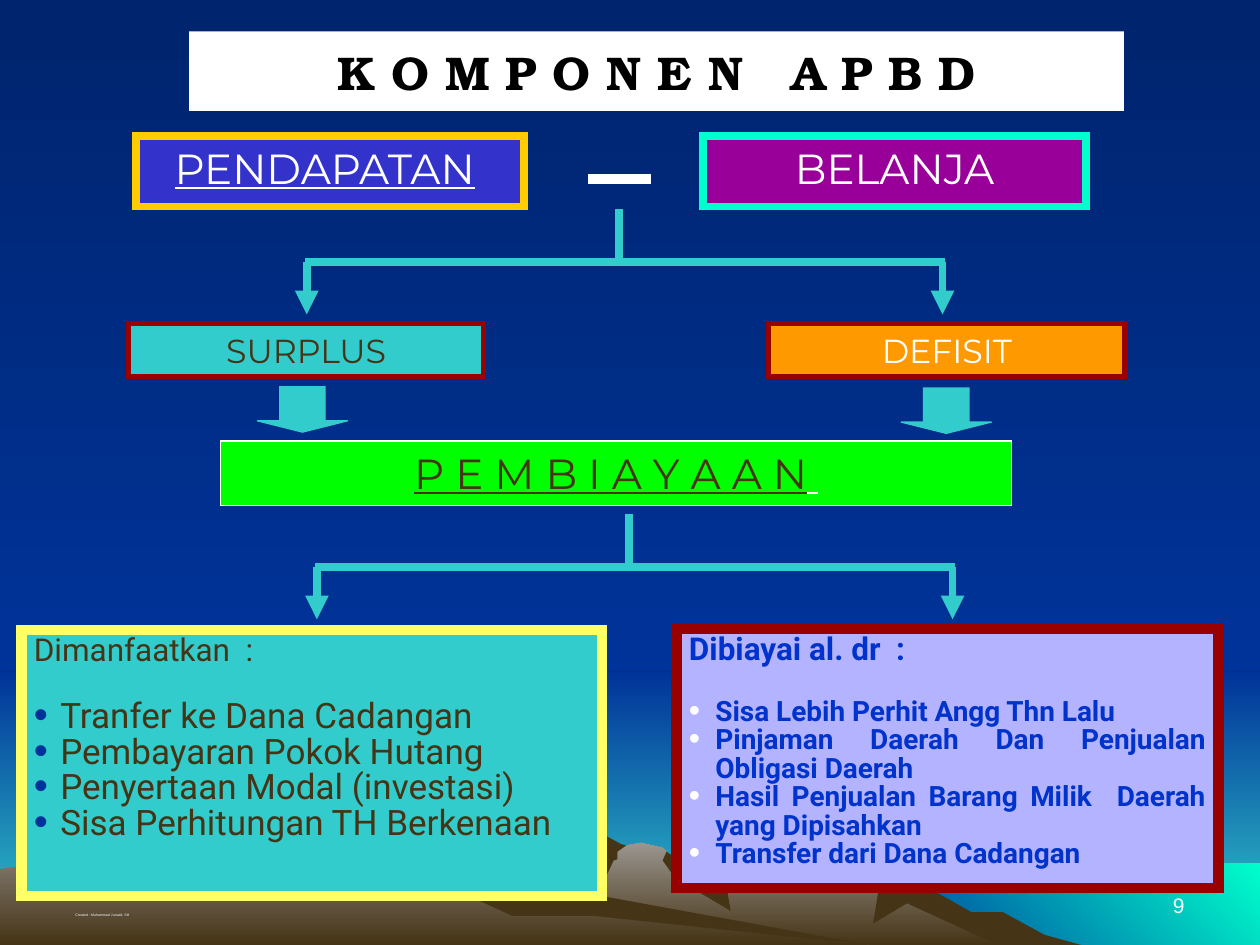
import pptx
import pptx.dml.color
import pptx.enum.shapes
import pptx.enum.text
import pptx.oxml
import pptx.oxml.ns
import pptx.util

RGB = pptx.dml.color.RGBColor
SHAPE = pptx.enum.shapes.MSO_SHAPE
ALIGN = pptx.enum.text.PP_ALIGN
ANCHOR = pptx.enum.text.MSO_ANCHOR

WHITE = RGB(0xFF, 0xFF, 0xFF)
INK = RGB(0x01, 0x00, 0x00)
NIGHT = RGB(0x00, 0x24, 0x6D)
NAVY = RGB(0x00, 0x33, 0x99)
TEAL = RGB(0x33, 0xCC, 0xCC)
AQUA = RGB(0x00, 0xFF, 0xCC)
BROWN = RGB(0x46, 0x34, 0x16)
STONE = RGB(0xA5, 0xA2, 0x9F)
SLATE = RGB(0x93, 0x8F, 0x8B)
ORANGE = RGB(0xFF, 0x99, 0x00)
GOLD = RGB(0xFF, 0xCC, 0x00)
YELLOW = RGB(0xFF, 0xFF, 0x66)
GREEN = RGB(0x00, 0xFF, 0x00)
RED = RGB(0x99, 0x00, 0x00)
PURPLE = RGB(0x99, 0x00, 0x99)
INDIGO = RGB(0x33, 0x33, 0xCC)
LILAC = RGB(0xB3, 0xB3, 0xFF)
BLUE = RGB(0x00, 0x33, 0xCC)

COLUMNS, ROWS = 100, 75
DOWN, UP_RIGHT = 270, 45

PEAK = [
    (80.2, 74), (77.8, 72.7), (76.4, 72.3), (72.3, 69.8), (70.2, 67.1), (68.5, 66),
    (67.6, 66.6), (65.6, 67.1), (62.9, 67.1), (61.3, 68.1), (56.6, 69.7), (53.6, 69),
    (52.9, 67.6), (52.6, 67.3), (50.9, 66.9), (48.6, 67.3), (47.1, 65.8), (46.5, 65.8),
    (45, 66.4), (43.8, 67.1), (42.4, 67.2), (39.5, 68.4), (35.5, 69.8), (32.7, 70.9),
    (27.7, 73.9), (25.8, 75), (82.1, 75)]
PEAK_SHADES = [
    [(79.6, 72.4), (77.1, 72.4), (73.4, 70.3), (70.7, 67.1), (68.5, 66), (68.9, 66.4),
     (68.5, 67.1), (69.1, 68), (69.8, 70.2), (69.3, 73.3), (72, 71.7), (79.2, 75),
     (85.8, 75), (82.9, 74.2)],
    [(47.1, 65.8), (47.4, 66.2), (46.9, 66.4), (46.8, 67.1), (47.2, 68), (47.3, 69),
     (46.5, 72.7), (47.4, 70.4), (47.9, 70), (48.7, 68.3), (49, 68.2), (49, 67.6),
     (49.7, 67.1), (49.3, 67)],
    [(52.9, 67.6), (52.6, 68.3), (53.6, 69.7), (58, 72.3), (57.6, 70), (59.2, 68.9),
     (57, 69.2), (54.2, 68.5)]]
RIDGE = [
    (69, 75), (66.7, 74.8), (43.2, 71.2), (35.4, 66.5), (33.1, 66.3), (32.7, 66.8),
    (32.3, 66.8), (31.8, 66.4), (29.6, 67.6), (27.9, 68.1), (27.1, 68.2), (26, 67.6),
    (23.6, 68.1), (22.3, 66.3), (21.2, 65.8), (19.6, 65.8), (18.9, 66.2), (16, 67.1),
    (14.8, 66.7), (14.3, 66.7), (13.2, 67.1), (12.3, 66.9), (11.1, 66.9), (9.4, 67.1),
    (6.8, 66.2), (5.6, 66.9), (3.5, 67.9), (2.6, 68.5), (1.4, 68.8), (0, 69), (0, 75)]
RIDGE_SHADES = [
    [(21.2, 66.3), (20.8, 66.9), (21.9, 67.8), (23.2, 69), (24.1, 68.8), (26.7, 70.9),
     (26.1, 68.9), (27.1, 68.2), (26, 67.4), (24.5, 66.8), (23, 66.2), (21.3, 65.9)],
    [(37, 66.8), (35.4, 66.5), (34.4, 66.5), (33.9, 66.9), (33.7, 68.7), (34.8, 68.3),
     (35.3, 68.8), (36.3, 69.1), (37.4, 71.2), (40.7, 72.7), (47.2, 72.7), (69, 75),
     (45.5, 70.7), (42.7, 69.2), (40.1, 68.1)]]


class Board:
    """Holds the grid, the colours' application and the page being drawn."""

    def __init__(self, deck):
        self.column = deck.slide_width / COLUMNS
        self.row = deck.slide_height / ROWS
        self.page = deck.slides.add_slide(deck.slide_layouts[6])

    def cells(self, x, y):
        return round(x * self.column), round(y * self.row)

    def paint(self, fill, colours, angle=DOWN):
        if isinstance(colours, RGB):
            fill.solid()
            fill.fore_color.rgb = colours
            return
        fill.gradient()
        fill.gradient_angle = angle
        for stop, colour in zip(fill.gradient_stops, colours):
            stop.color.rgb = colour

    def finish(self, shape, colours, edge=None, width=0, angle=DOWN):
        shape.shadow.inherit = False
        self.paint(shape.fill, colours, angle)
        if edge is None:
            shape.line.fill.background()
            return
        shape.line.color.rgb = edge
        shape.line.width = pptx.util.Pt(width)
        self.add_xml(shape._element.spPr.find(pptx.oxml.ns.qn("a:ln")), 'miter lim="800000"')

    def add_xml(self, parent, tag):
        space = pptx.oxml.ns.nsdecls("a")
        parent.append(pptx.oxml.parse_xml(f"<a:{tag} {space}/>"))

    def outline(self, points, colours):
        corners = [self.cells(x, y) for x, y in points]
        builder = self.page.shapes.build_freeform(*corners[0])
        builder.add_line_segments(corners[1:], close=True)
        self.finish(builder.convert_to_shape(), colours)

    def box(self, x, y, width, height, colours, edge=None, weight=0, kind=SHAPE.RECTANGLE, angle=DOWN):
        box = self.page.shapes.add_shape(kind, *self.cells(x, y), *self.cells(width, height))
        self.finish(box, colours, edge, weight, angle)
        box.text_frame.word_wrap = True
        box.text_frame.vertical_anchor = ANCHOR.TOP
        return box

    def arrow(self, x, y):
        arrow = self.box(x, y, 7.2, 3.6, TEAL, TEAL, 0.75, SHAPE.DOWN_ARROW)
        arrow.adjustments[0], arrow.adjustments[1] = 0.5, 0.25

    def line(self, start, end, colour=TEAL, width=4.5, head=False):
        line = self.page.shapes.add_connector(
            pptx.enum.shapes.MSO_CONNECTOR.STRAIGHT, *self.cells(*start), *self.cells(*end))
        line.line.color.rgb = colour
        line.line.width = pptx.util.Pt(width)
        properties = line._element.spPr
        if head:
            self.add_xml(properties.find(pptx.oxml.ns.qn("a:ln")), 'tailEnd type="triangle"')
        self.add_xml(properties, "effectLst")

    def fork(self, left, bar):
        self.line((left, bar), (left + 50.8, bar))
        self.line((left + 24.9, bar - 4.2), (left + 24.9, bar))
        for x in (left + 0.15, left + 50.6):
            self.line((x, bar), (x, bar + 4.15), head=True)

    def span(self, para, text, font, size, colour, bold=False, underline=False):
        span = para.add_run()
        span.text = text
        span.font.name = font
        span.font.size = pptx.util.Pt(size)
        span.font.color.rgb = colour
        span.font.bold = bold
        span.font.underline = underline

    def label(self, box, text, size, colour, font="Montserrat", align=ALIGN.CENTER, **style):
        para = box.text_frame.paragraphs[0]
        para.alignment = align
        self.span(para, text, font, size, colour, **style)
        return para

    def footer(self, x, text, size, align):
        box = self.page.shapes.add_textbox(*self.cells(x, 68.3), *self.cells(23.3, 5))
        box.text_frame.word_wrap = True
        box.text_frame.vertical_anchor = ANCHOR.BOTTOM
        self.label(box, text, size, WHITE, "Arial", align)

    def panel(self, box, heading, items, size, colour, dot, align, bold):
        head = self.label(box, heading, 18, colour, "Roboto", ALIGN.LEFT, bold=bold)
        head.line_spacing = 0.85
        for index, item in enumerate(items):
            para = box.text_frame.add_paragraph()
            para.alignment = align
            para.line_spacing = 0.85
            para.space_before = pptx.util.Pt(0 if index else 18)
            properties = para._p.get_or_add_pPr()
            indent = round(2.1 * self.column)
            properties.set("marL", str(indent))
            properties.set("indent", str(-indent))
            space = pptx.oxml.ns.nsdecls("a")
            properties.append(pptx.oxml.parse_xml(
                f'<a:buClr {space}><a:srgbClr val="{dot}"/></a:buClr>'))
            for tag in ('buSzPct val="115000"', 'buFont typeface="Arial"', 'buChar char="•"'):
                self.add_xml(properties, tag)
            self.span(para, item, "Roboto", size, colour, bold)


def main():
    deck = pptx.Presentation()
    deck.slide_width, deck.slide_height = pptx.util.Inches(10), pptx.util.Inches(7.5)
    board = Board(deck)
    board.paint(board.page.background.fill, (NIGHT, NAVY))
    board.box(0, 53.3, 100, 21.7, (NAVY, TEAL))
    board.box(0, 0, 100, 53.3, (NIGHT, NAVY))
    board.box(68.3, 68.5, 31.7, 6.5, (NAVY, AQUA), angle=UP_RIGHT)
    for hill, shades, colours in ((PEAK, PEAK_SHADES, (STONE, BROWN)),
                                  (RIDGE, RIDGE_SHADES, (SLATE, BROWN))):
        board.outline(hill, colours)
        for shade in shades:
            board.outline(shade, BROWN)

    board.footer(5, "Created : Muhammad Junaidi, SH", 2, ALIGN.LEFT)
    board.footer(71.7, "9", 12, ALIGN.RIGHT)

    title = board.box(15, 2.5, 74.2, 6.3, WHITE)
    title.text_frame.vertical_anchor = ANCHOR.MIDDLE
    board.label(title, "K O M P O N E N   A P B D", 27, INK, "TeX Gyre Bonum", bold=True)

    income = board.box(10.8, 10.8, 30.8, 5.6, INDIGO, GOLD, 4.5)
    para = board.label(income, "PENDAPATAN", 24, WHITE, underline=True)
    board.span(para, " ", "Montserrat", 24, WHITE)
    board.line((46.7, 14.2), (51.7, 14.2), WHITE, 6)
    board.label(board.box(55.8, 10.8, 30.4, 5.6, PURPLE, AQUA, 4.5), "BELANJA", 24, WHITE)
    board.fork(24.2, 20.8)

    board.label(board.box(10.2, 25.7, 28.2, 4.2, TEAL, RED, 3), "SURPLUS", 19, BROWN)
    board.label(board.box(61, 25.7, 28.3, 4.2, ORANGE, RED, 3), "DEFISIT", 19, WHITE)
    board.arrow(20.4, 30.7)
    board.arrow(71.5, 30.8)

    financing = board.box(17.5, 35, 62.8, 5.1, GREEN, WHITE, 0.75)
    para = board.label(financing, "P E M B I A Y A A N", 24, BROWN, underline=True)
    board.span(para, " ", "Montserrat", 24, WHITE, underline=True)
    board.fork(25, 45)

    board.panel(
        board.box(1.7, 50, 46.1, 21.1, TEAL, YELLOW, 6), "Dimanfaatkan  :",
        ["Tranfer ke Dana Cadangan", "Pembayaran Pokok Hutang",
         "Penyertaan Modal (investasi)", "Sisa Perhitungan TH Berkenaan"],
        20, BROWN, NAVY, ALIGN.LEFT, False)
    board.panel(
        board.box(53.7, 49.9, 43, 20.6, LILAC, RED, 6), "Dibiayai al. dr  :",
        ["Sisa Lebih Perhit Angg Thn Lalu", "Pinjaman Daerah Dan Penjualan Obligasi Daerah",
         "Hasil Penjualan Barang Milik  Daerah yang Dipisahkan", "Transfer dari Dana Cadangan"],
        16, BLUE, WHITE, ALIGN.JUSTIFY, True)
    deck.save("out.pptx")


if __name__ == "__main__":
    main()
